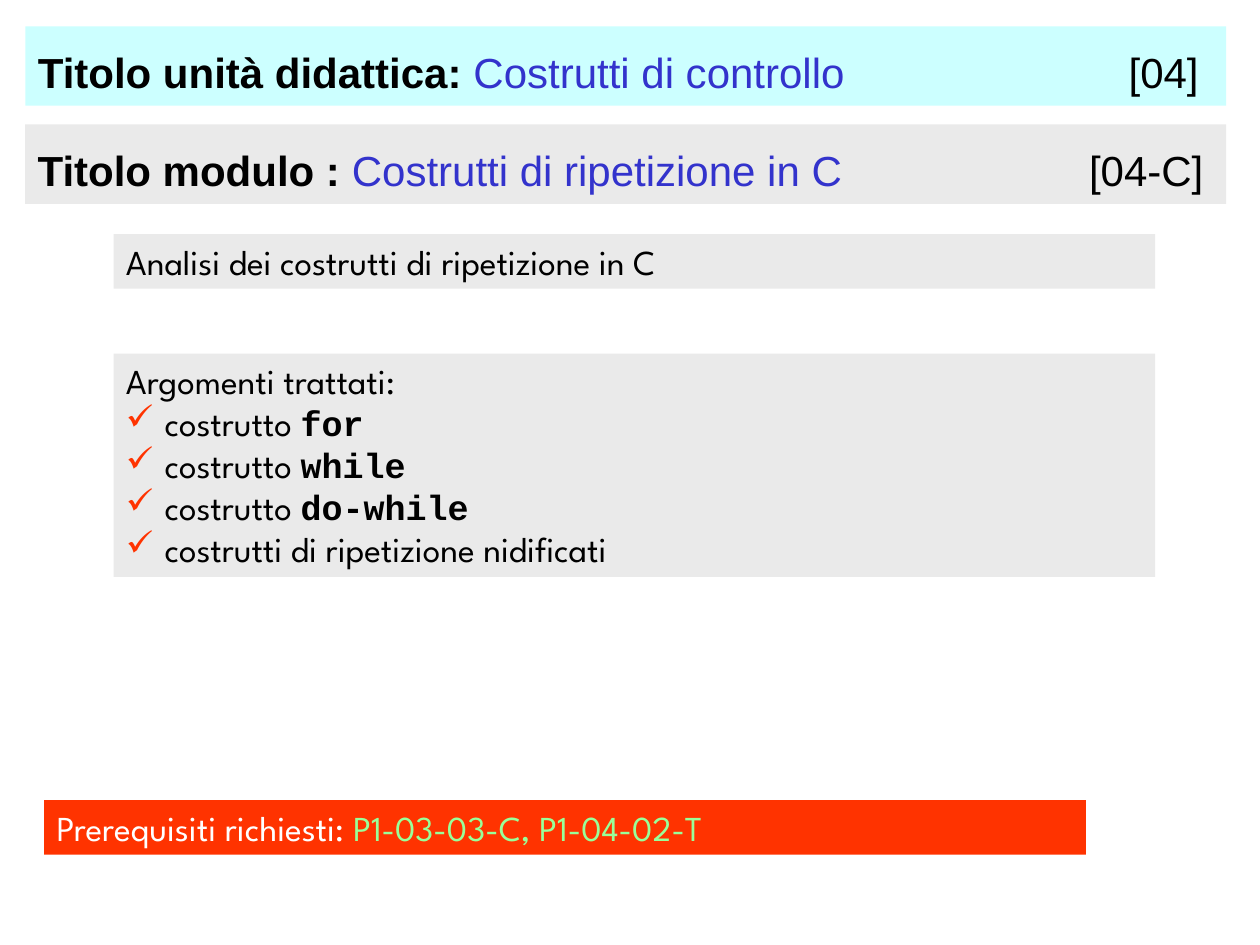
from lxml.etree import SubElement
from pptx import Presentation
from pptx.dml.color import RGBColor
from pptx.enum.shapes import MSO_SHAPE
from pptx.enum.text import MSO_ANCHOR, MSO_AUTO_SIZE, PP_ALIGN
from pptx.oxml.ns import qn
from pptx.util import Cm, Pt

BODY, CODE, HEAD = "League Spartan", "Courier New", "Arial"
BLACK, BLUE, GREY, RED = "000000", "3333CC", "EAEAEA", "FF3300"


def rgb(value):
    return RGBColor.from_string(value)


def add_text(p, text, font=BODY, size=20, color=BLACK, bold=False):
    r = p.add_run()
    r.text = text
    r.font.name, r.font.size, r.font.bold = font, Pt(size), bold
    r.font.color.rgb = rgb(color)


def format_panel(sp, box, fill):
    """Place and fill a panel; return its empty text frame."""
    sp.left, sp.top, sp.width, sp.height = (Cm(v) for v in box)
    sp.fill.solid()
    sp.fill.fore_color.rgb = rgb(fill)
    sp.line.fill.background()
    tf = sp.text_frame
    tf.word_wrap = True
    tf.auto_size = MSO_AUTO_SIZE.NONE
    tf.vertical_anchor = MSO_ANCHOR.TOP
    tf.paragraphs[0].alignment = PP_ALIGN.LEFT
    return tf


def add_panel(s, box, fill):
    sp = s.shapes.add_shape(MSO_SHAPE.RECTANGLE, 0, 0, 0, 0)
    sp.shadow.inherit = False
    return format_panel(sp, box, fill)


def fill_heading(tf, label, title, code, code_end):
    """Write label and title, with the code right-aligned at code_end."""
    p = tf.paragraphs[0]
    tabs = SubElement(p._p.get_or_add_pPr(), qn("a:tabLst"))
    SubElement(tabs, qn("a:tab"), pos=str(Cm(code_end)), algn="r")
    add_text(p, label, HEAD, 24, bold=True)
    add_text(p, title, HEAD, 24, BLUE)
    add_text(p, "\t", HEAD, 32)
    add_text(p, code, HEAD, 24)


def add_check(p, indent=0.78):
    pPr = p._p.get_or_add_pPr()
    pPr.set("marL", str(Cm(indent)))
    pPr.set("indent", str(-Cm(indent)))
    SubElement(SubElement(pPr, qn("a:buClr")), qn("a:srgbClr"), val=RED)
    SubElement(pPr, qn("a:buChar"), char="✓")


def add_topics(s, box, heading, topics):
    tf = add_panel(s, box, GREY)
    add_text(tf.paragraphs[0], heading)
    for text, keyword in topics:
        p = tf.add_paragraph()
        p.alignment = PP_ALIGN.LEFT
        add_check(p)
        add_text(p, text)
        if keyword:
            add_text(p, keyword, CODE, bold=True)


def main():
    prs = Presentation()
    prs.slide_width, prs.slide_height = Cm(25.4), Cm(19.05)
    s = prs.slides.add_slide(prs.slide_layouts[5])

    tf = format_panel(s.shapes.title, (0.51, 0.53, 24.21, 1.6), "CCFFFF")
    fill_heading(tf, "Titolo unità didattica: ", "Costrutti di controllo", "[04]", 23.4)
    tf = add_panel(s, (0.51, 2.51, 24.21, 1.6), GREY)
    fill_heading(tf, "Titolo modulo : ", "Costrutti di ripetizione in C", "[04-C]", 23.5)

    tf = add_panel(s, (2.29, 4.72, 21, 1.1), GREY)
    add_text(tf.paragraphs[0], "Analisi dei costrutti di ripetizione in C")

    topics = [("costrutto ", word) for word in ("for", "while", "do-while")]
    topics.append(("costrutti di ripetizione nidificati", None))
    add_topics(s, (2.29, 7.13, 21, 4.5), "Argomenti trattati:", topics)

    tf = add_panel(s, (0.89, 16.13, 21, 1.1), RED)
    add_text(tf.paragraphs[0], "Prerequisiti richiesti: ", color="FFFFFF")
    add_text(tf.paragraphs[0], "P1-03-03-C, P1-04-02-T", color="99FF99")
    prs.save("out.pptx")


if __name__ == "__main__":
    main()
